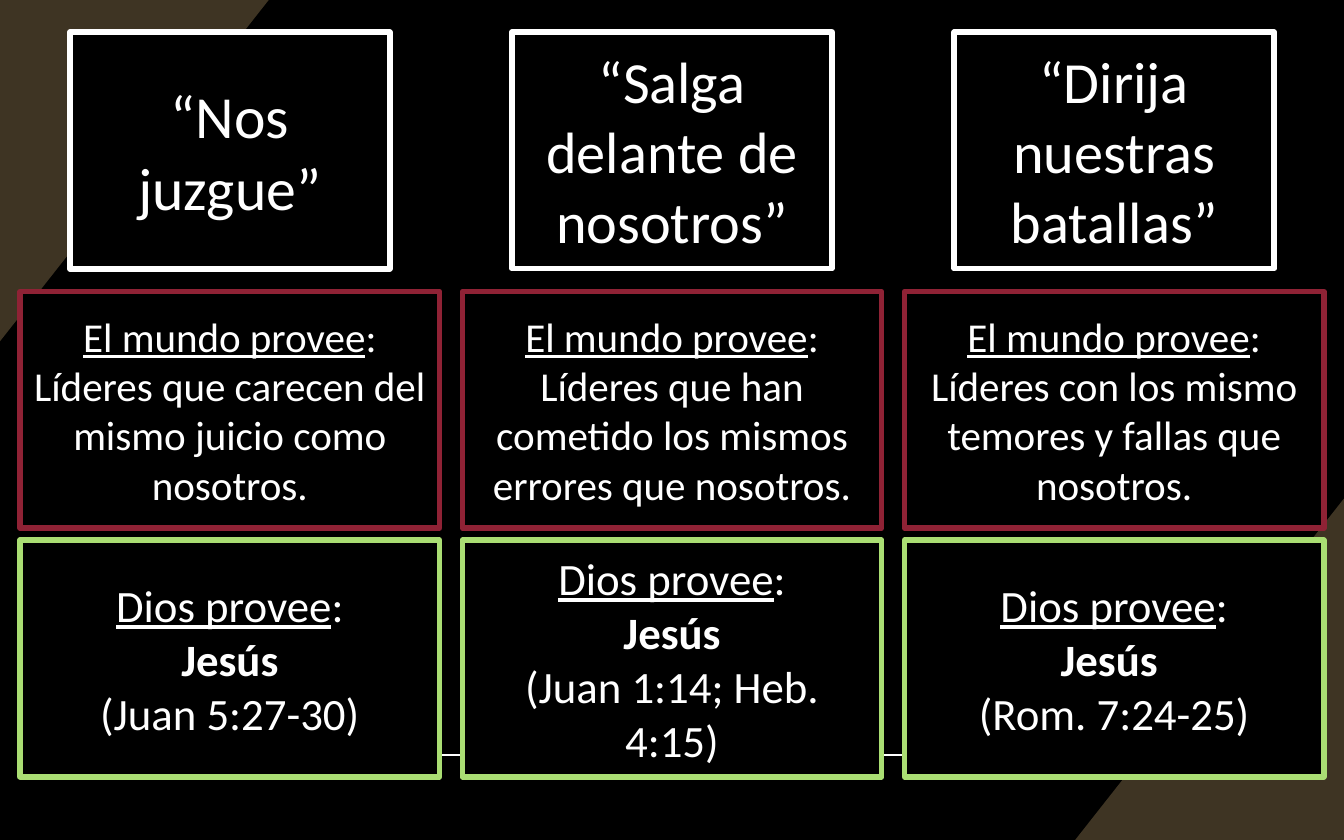
"""Build a slide comparing what the world provides with what God provides."""
from dataclasses import dataclass

from lxml.etree import SubElement
from pptx import Presentation
from pptx.dml.color import RGBColor
from pptx.enum.shapes import MSO_CONNECTOR, MSO_SHAPE
from pptx.enum.text import MSO_ANCHOR, MSO_AUTO_SIZE, PP_ALIGN
from pptx.oxml.ns import qn
from pptx.util import Inches, Pt

COLORS = {
    "black": "000000",
    "white": "FFFFFF",
    "brown": "3E3423",
    "red": "8F2235",
    "green": "AADE73",
}
FONT = "Calibri"
BOX_H = 1.76
HEAD_W, CARD_W = 2.38, 3.12
FIRST_CENTER, COLUMN_STEP = 1.71, 3.29
HEAD_TOP, WORLD_TOP, GOD_TOP = 0.24, 2.17, 4.02


@dataclass(frozen=True)
class Run:
    """A piece of text with its emphasis."""
    text: str
    bold: bool = False
    underline: bool = False


@dataclass(frozen=True)
class Column:
    """One request of the people and its two answers."""
    request: str
    heading_size: float
    world: str
    name: str
    verse: str


COLUMNS = [
    Column("“Nos juzgue”", 32,
           "Líderes que carecen del mismo juicio como nosotros.",
           "Jesús", "(Juan 5:27-30)"),
    Column("“Salga delante de nosotros”", 31.2,
           "Líderes que han cometido los mismos errores que nosotros.",
           "Jesús", "(Juan 1:14; Heb. 4:15)"),
    Column("“Dirija nuestras batallas”", 31.2,
           "Líderes con los mismo temores y fallas que nosotros.",
           "Jesús ", "(Rom. 7:24-25)"),
]


def rgb(name: str) -> RGBColor:
    """Return a palette colour."""
    return RGBColor.from_string(COLORS[name])


def add_corner(s, points: list[tuple[float, float]]) -> None:
    """Draw a brown corner triangle."""
    start, *rest = [(Inches(x), Inches(y)) for x, y in points]
    builder = s.shapes.build_freeform(*start)
    builder.add_line_segments(rest, close=True)
    sp = builder.convert_to_shape()
    sp.shadow.inherit = False
    sp.fill.solid()
    sp.fill.fore_color.rgb = rgb("brown")
    sp.line.fill.background()


def add_rule(s, left: float, right: float, y: float) -> None:
    """Draw the thin white rule behind the cards."""
    line = s.shapes.add_connector(
        MSO_CONNECTOR.STRAIGHT, Inches(left), Inches(y), Inches(right), Inches(y))
    line.line.color.rgb = rgb("white")
    line.line.width = Pt(1)
    SubElement(line._element.spPr, qn("a:effectLst"))


def add_box(s, center: float, top: float, width: float):
    """Add a rectangle centred on a column."""
    sp = s.shapes.add_shape(
        MSO_SHAPE.RECTANGLE, Inches(center - width / 2), Inches(top),
        Inches(width), Inches(BOX_H))
    sp.shadow.inherit = False
    return sp


def fill_box(sp, border: str, size: float, paragraphs: list[list[Run]]) -> None:
    """Style a box and write its centred paragraphs."""
    sp.fill.solid()
    sp.fill.fore_color.rgb = rgb("black")
    sp.line.color.rgb = rgb(border)
    sp.line.width = Pt(3)
    tf = sp.text_frame
    tf.word_wrap = True
    tf.auto_size = MSO_AUTO_SIZE.NONE
    tf.vertical_anchor = MSO_ANCHOR.MIDDLE
    for i, runs in enumerate(paragraphs):
        p = tf.add_paragraph() if i else tf.paragraphs[0]
        p.alignment = PP_ALIGN.CENTER
        for run in runs:
            r = p.add_run()
            r.text = run.text
            r.font.name = FONT
            r.font.size = Pt(size)
            r.font.bold = run.bold
            r.font.underline = run.underline
            r.font.color.rgb = rgb("white")


def place_title(s):
    """Move the title placeholder over the first column, above the backdrop."""
    sp = s.shapes.title
    s.shapes._spTree.append(sp._element)
    sp.left, sp.top = Inches(FIRST_CENTER - HEAD_W / 2), Inches(HEAD_TOP)
    sp.width, sp.height = Inches(HEAD_W), Inches(BOX_H)
    return sp


def main() -> None:
    """Build and save the slide."""
    prs = Presentation()
    prs.slide_width, prs.slide_height = Inches(10), Inches(6.25)
    s = prs.slides.add_slide(prs.slide_layouts[5])
    s.background.fill.solid()
    s.background.fill.fore_color.rgb = rgb("black")

    add_corner(s, [(10, 3.71), (10, 6.25), (8, 6.25)])
    add_corner(s, [(0, 2.54), (0, 0), (2, 0)])
    add_rule(s, 1.01, 9.02, 5.62)

    centers = [FIRST_CENTER + i * COLUMN_STEP for i in range(len(COLUMNS))]
    for i, (center, col) in enumerate(zip(centers, COLUMNS)):
        head = add_box(s, center, HEAD_TOP, HEAD_W) if i else place_title(s)
        fill_box(head, "white", col.heading_size, [[Run(col.request)]])
    for center, col in zip(centers, COLUMNS):
        fill_box(add_box(s, center, WORLD_TOP, CARD_W), "red", 22, [
            [Run("El mundo provee", underline=True), Run(":")],
            [Run(col.world)],
        ])
    for center, col in zip(centers, COLUMNS):
        fill_box(add_box(s, center, GOD_TOP, CARD_W), "green", 24, [
            [Run("Dios provee", underline=True), Run(":")],
            [Run(col.name, bold=True)],
            [Run(col.verse)],
        ])
    prs.save("out.pptx")


if __name__ == "__main__":
    main()
